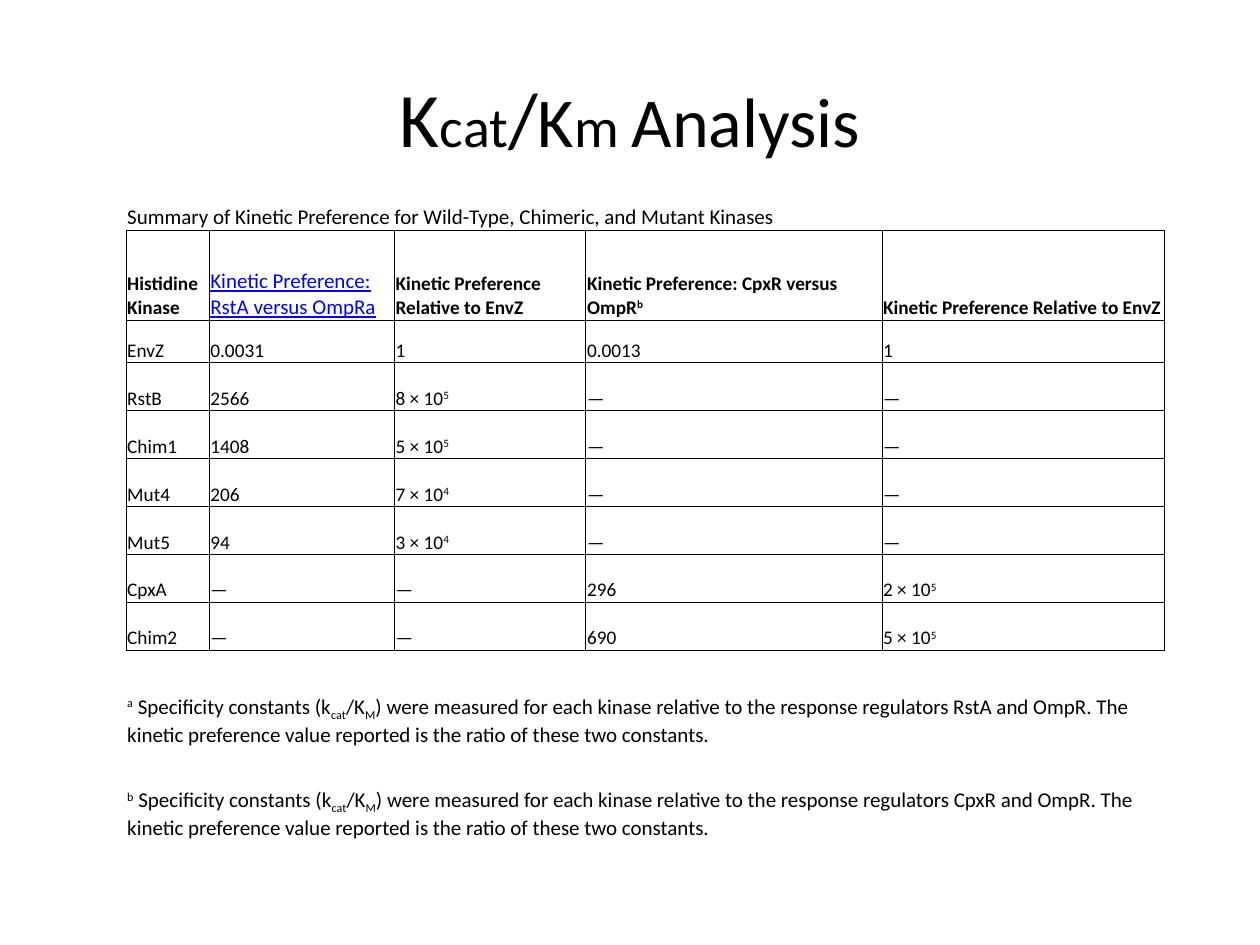
"""Build a slide with a table of kinetic preferences for kinases."""
import dataclasses
import typing

import pptx
import pptx.dml.color
import pptx.enum.text
import pptx.oxml
import pptx.oxml.ns
import pptx.util

Inches = pptx.util.Inches
Anchor = pptx.enum.text.MSO_ANCHOR
Align = pptx.enum.text.PP_ALIGN


@dataclasses.dataclass(frozen=True)
class Theme:
    font: str = "Calibri"
    ink: str = "000000"
    link: str = "0000FF"
    title: float = 44
    title_word: float = 40
    title_small: float = 32
    body: float = 11
    note: float = 12
    border: float = 0.5


THEME = Theme()


class Span(typing.NamedTuple):
    text: str
    size: float | None = None
    baseline: int = 0


class Row(typing.NamedTuple):
    height: float
    cells: list[list[Span]]
    size: float = THEME.body
    bold: bool = False
    boxed: bool = True
    merged: int = 1


def plain(text: str) -> list[Span]:
    return [Span(text)]


def raised(text: str, mark: str) -> list[Span]:
    return [Span(text), Span(mark, baseline=30)]


def power(factor: int, exponent: int) -> list[Span]:
    return raised(f"{factor} × 10", str(exponent))


def footnote(mark: str, regulator: str) -> list[Span]:
    return [
        Span(mark, baseline=30),
        Span(" Specificity constants (k"),
        Span("cat", baseline=-25),
        Span("/K"),
        Span("M", baseline=-25),
        Span(
            ") were measured for each kinase relative to the response regulators "
            f"{regulator} and OmpR. The kinetic preference value reported is the "
            "ratio of these two constants."
        ),
    ]


DASH = plain("—")
RELATIVE = plain("Kinetic Preference Relative to EnvZ")
LINK = plain("Kinetic Preference: RstA versus OmpRa")
COLUMNS = [0.66, 1.47, 1.52, 2.35, 2.24]
ROWS = [
    Row(0.33, [plain("Summary of Kinetic Preference for Wild-Type, Chimeric, and Mutant Kinases")],
        size=THEME.note, boxed=False, merged=4),
    Row(0.71, [plain("Histidine Kinase"), LINK, RELATIVE,
               raised("Kinetic Preference: CpxR versus OmpR", "b"), RELATIVE], bold=True),
    Row(0.34, [plain("EnvZ"), plain("0.0031"), plain("1"), plain("0.0013"), plain("1")]),
    Row(0.38, [plain("RstB"), plain("2566"), power(8, 5), DASH, DASH]),
    Row(0.38, [plain("Chim1"), plain("1408"), power(5, 5), DASH, DASH]),
    Row(0.38, [plain("Mut4"), plain("206"), power(7, 4), DASH, DASH]),
    Row(0.38, [plain("Mut5"), plain("94"), power(3, 4), DASH, DASH]),
    Row(0.38, [plain("CpxA"), DASH, DASH, plain("296"), power(2, 5)]),
    Row(0.38, [plain("Chim2"), DASH, DASH, plain("690"), power(5, 5)]),
    Row(0.78, [footnote("a", "RstA")], size=THEME.note, boxed=False, merged=5),
    Row(0.74, [footnote("b", "CpxR")], size=THEME.note, boxed=False, merged=5),
]


def write(frame, spans: list[Span], *, size: float, color: str = THEME.ink,
          bold: bool = False, underline: bool = False, align=Align.LEFT) -> None:
    para = frame.paragraphs[0]
    para.alignment = align
    for span in spans:
        run = para.add_run()
        run.text = span.text
        font = run.font
        font.name = THEME.font
        font.size = pptx.util.Pt(span.size or size)
        font.bold = bold
        font.underline = underline
        font.color.rgb = pptx.dml.color.RGBColor.from_string(color)
        if span.baseline:
            run._r.get_or_add_rPr().set("baseline", str(span.baseline * 1000))


def add_borders(cell) -> None:
    properties = cell._tc.get_or_add_tcPr()
    for side in ("lnL", "lnR", "lnT", "lnB"):
        properties.append(pptx.oxml.parse_xml(
            f'<a:{side} {pptx.oxml.ns.nsdecls("a")} w="{pptx.util.Pt(THEME.border)}">'
            f'<a:solidFill><a:srgbClr val="{THEME.ink}"/></a:solidFill></a:{side}>'
        ))


def prepare_cell(cell, boxed: bool) -> None:
    cell.margin_left = cell.margin_right = cell.margin_top = Inches(0.01)
    cell.margin_bottom = Inches(0)
    cell.vertical_anchor = Anchor.BOTTOM
    if boxed:
        add_borders(cell)
    cell.fill.background()


def add_title(slide) -> None:
    box = slide.shapes.add_textbox(Inches(0.5), Inches(0.3), Inches(9), Inches(1.25))
    box.text_frame.word_wrap = True
    box.text_frame.vertical_anchor = Anchor.MIDDLE
    spans = [
        Span("K"), Span("cat", THEME.title_small), Span("/"), Span("K", THEME.title_word),
        Span("m ", THEME.title_small), Span("Analysis", THEME.title_word),
    ]
    write(box.text_frame, spans, size=THEME.title, align=Align.CENTER)


def add_kinetics_table(slide) -> None:
    height = sum(row.height for row in ROWS)
    frame = slide.shapes.add_table(len(ROWS), len(COLUMNS), Inches(1), Inches(1.5),
                                   Inches(sum(COLUMNS)), Inches(height))
    table = frame.table
    table.first_row = table.horz_banding = False
    style = table._tbl.tblPr.find(pptx.oxml.ns.qn("a:tableStyleId"))
    style.text = "{2D5ABB26-0587-4C30-8999-92F81FD0307C}"
    for column, width in zip(table.columns, COLUMNS):
        column.width = Inches(width)
    for index, row in enumerate(ROWS):
        table.rows[index].height = Inches(row.height)
        if row.merged > 1:
            table.cell(index, 0).merge(table.cell(index, row.merged - 1))
        padding = [plain("")] * (len(COLUMNS) - len(row.cells))
        for position, spans in enumerate(row.cells + padding):
            cell = table.cell(index, position)
            prepare_cell(cell, row.boxed)
            if spans is LINK:
                write(cell.text_frame, spans, size=THEME.note, color=THEME.link, underline=True)
            else:
                write(cell.text_frame, spans, size=row.size, bold=row.bold)


def main() -> None:
    deck = pptx.Presentation()
    deck.slide_width, deck.slide_height = Inches(10), Inches(7.5)
    page = deck.slides.add_slide(deck.slide_layouts[6])
    add_title(page)
    add_kinetics_table(page)
    deck.save("out.pptx")


if __name__ == "__main__":
    main()
